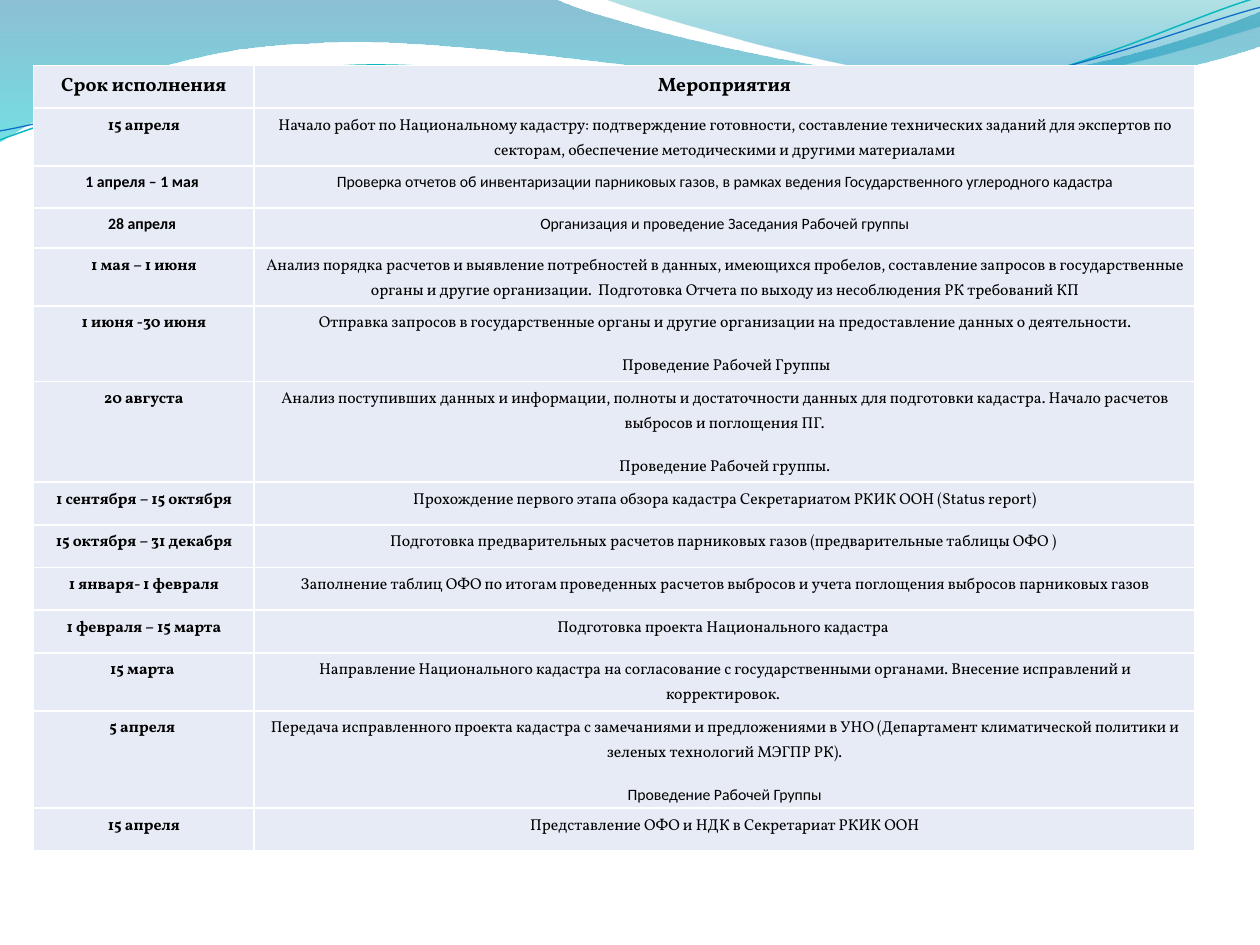
import math

import pptx
import pptx.dml.color
import pptx.enum.text
import pptx.oxml
import pptx.oxml.ns
import pptx.util

Cm = pptx.util.Cm
Pt = pptx.util.Pt
qn = pptx.oxml.ns.qn
SERIF, SANS = "Vollkorn", "Calibri"

# Outlines in cm: a pair is a corner, six numbers are a Bezier curve.
WAVE_BACK = [
    (0, 0), (11.18, -0.03),
    (12.09, 0.43, 16.87, 1.6, 19.25, 1.6), (21.67, 1.6, 24.33, 0.66, 25.4, 0.23),
    (25.43, 0.91),
    (24.97, 1.12, 22.1, 1.93, 18.95, 1.91), (15.8, 1.91, 9.7, 0.71, 6.53, 0.86),
    (3.28, 0.91, 1.17, 2.11, -0.03, 2.87), (0, 0),
]
WAVE_FRONT = [
    (12.17, -0.03),
    (12.93, 0.28, 17.32, 1.57, 19.53, 1.65), (21.74, 1.75, 24.41, 0.81, 25.4, 0.53),
    (25.4, 0), (12.17, -0.03),
]
TEAL_LINE = [
    (0, 2.82),
    (1.22, 2.36, 4.01, 1.45, 7.04, 1.32), (10.03, 1.19, 15.06, 2.26, 18.11, 2.03),
    (21.16, 1.8, 23.83, 0.38, 25.35, -0.05),
]
BLUE_LINE = [
    (0, 2.64),
    (1.19, 2.44, 4.17, 1.55, 7.19, 1.42), (10.24, 1.3, 15.16, 2.13, 18.21, 1.91),
    (21.23, 1.7, 23.9, 0.53, 25.4, 0.15),
]

# Row height in cm, date, activities; a (text, font) pair overrides the serif font.
SCHEDULE = [
    (0.86, "Срок исполнения", ["Мероприятия"]),
    (1.09, "15 апреля", [
        "Начало работ по Национальному кадастру: подтверждение готовности, составление "
        "технических заданий для экспертов по секторам, обеспечение методическими и "
        "другими материалами"]),
    (0.84, ("1 апреля – 1 мая ", SANS), [
        ("Проверка отчетов об инвентаризации парниковых газов, в рамках ведения "
         "Государственного углеродного кадастра", SANS)]),
    (0.81, ("28 апреля ", SANS), [
        ("Организация и проведение Заседания Рабочей группы", SANS)]),
    (1.09, "1 мая – 1 июня", [
        "Анализ порядка расчетов и выявление потребностей в данных, имеющихся пробелов, "
        "составление запросов в государственные органы и другие организации.  "
        "Подготовка Отчета по выходу из несоблюдения РК требований КП"]),
    (1.5, "1 июня -30 июня", [
        "Отправка запросов в государственные органы и другие организации на "
        "предоставление данных о деятельности.",
        " Проведение Рабочей Группы"]),
    (1.96, "20 августа", [
        "Анализ поступивших данных и информации, полноты и достаточности данных для "
        "подготовки кадастра. Начало расчетов выбросов и поглощения ПГ.",
        "Проведение Рабочей группы."]),
    (0.86, "1 сентября – 15 октября", [
        "Прохождение первого этапа обзора кадастра Секретариатом РКИК ООН (Status report)"]),
    (0.86, "15 октября – 31 декабря", [
        "Подготовка предварительных расчетов парниковых газов "
        "(предварительные таблицы ОФО ) "]),
    (0.86, "1 января- 1 февраля", [
        "Заполнение таблиц ОФО по итогам проведенных расчетов выбросов и учета "
        "поглощения выбросов парниковых газов"]),
    (0.86, "1 февраля – 15 марта", ["Подготовка проекта Национального кадастра "]),
    (1.09, "15 марта ", [
        "Направление Национального кадастра на согласование с государственными "
        "органами. Внесение исправлений и корректировок. "]),
    (1.96, "5 апреля ", [
        "Передача исправленного проекта кадастра с замечаниями и предложениями в УНО "
        "(Департамент климатической политики и зеленых технологий МЭГПР РК).",
        ("Проведение Рабочей Группы", SANS)]),
    (0.86, "15 апреля", ["Представление ОФО и НДК в Секретариат РКИК ООН"]),
]


def color(value):
    return pptx.dml.color.RGBColor.from_string(value)


def turn(outline, pivot, degrees):
    """Rotate every point of an outline clockwise around the pivot."""
    cosine, sine = math.cos(math.radians(degrees)), math.sin(math.radians(degrees))
    turned = []
    for segment in outline:
        numbers = []
        for x, y in zip(segment[::2], segment[1::2]):
            x, y = x - pivot[0], y - pivot[1]
            numbers += [pivot[0] + x * cosine - y * sine, pivot[1] + x * sine + y * cosine]
        turned.append(numbers)
    return turned


class SlideBuilder:
    cell_fill = "E7EBF5"
    border = "FFFFFF"
    text_color = "000000"

    def __init__(self, slide):
        self.slide = slide

    def freeform(self, outline, close):
        """Build a polygon through all control points, then bend it into curves."""
        points = [(Cm(x), Cm(y)) for segment in outline
                  for x, y in zip(segment[::2], segment[1::2])]
        builder = self.slide.shapes.build_freeform(*points[0])
        builder.add_line_segments(points[1:], close=close)
        shape = builder.convert_to_shape()
        shape.shadow.inherit = False
        lines = iter(list(shape.element.spPr.iter(qn("a:lnTo"))))
        for segment in outline[1:]:
            first = next(lines)
            if len(segment) == 6:
                first.tag = qn("a:cubicBezTo")
                for line in (next(lines), next(lines)):
                    first.append(line[0])
                    line.getparent().remove(line)
        return shape

    def wave(self, outline, stops):
        """Add a filled wave; stops are (position, colour, opacity in percent)."""
        shape = self.freeform(outline, True)
        shape.line.fill.background()
        shape.fill.gradient()
        shape.fill.gradient_angle = 270
        for stop, (position, value, _) in zip(shape.fill.gradient_stops, stops):
            stop.position = position
            stop.color.rgb = color(value)
        for element, stop in zip(shape.element.spPr.iter(qn("a:srgbClr")), stops):
            element.append(element.makeelement(qn("a:alpha"), {"val": str(stop[2] * 1000)}))

    def curve(self, outline, pivot, value, width, rotation=357.3):
        """Add a line whose frame is rotated, so that it shows along the outline."""
        shape = self.freeform(turn(outline, pivot, -rotation), False)
        shape.rotation = rotation
        shape.fill.background()
        shape.line.color.rgb = color(value)
        shape.line.width = Pt(width)

    def table(self, left, top, widths, rows):
        heights = [row[0] for row in rows]
        table = self.slide.shapes.add_table(
            len(rows), len(widths), Cm(left), Cm(top), Cm(sum(widths)), Cm(sum(heights))).table
        table.horz_banding = False
        for column, width in zip(table.columns, widths):
            column.width = Cm(width)
        for index, (height, date, activities) in enumerate(rows):
            table.rows[index].height = Cm(height)
            size = 9 if index else 11
            self.cell(table.cell(index, 0), [date], size, True)
            self.cell(table.cell(index, 1), activities, size, index == 0)

    def cell(self, cell, lines, size, bold):
        cell.margin_left = cell.margin_right = Cm(0.15)
        cell.margin_top = cell.margin_bottom = Pt(2.2)
        properties = cell._tc.get_or_add_tcPr()
        for side in "LRTB":
            properties.append(pptx.oxml.parse_xml(
                f'<a:ln{side} {pptx.oxml.ns.nsdecls("a")} w="{Pt(1)}"><a:solidFill>'
                f'<a:srgbClr val="{self.border}"/></a:solidFill></a:ln{side}>'))
        cell.fill.solid()
        cell.fill.fore_color.rgb = color(self.cell_fill)
        pairs = [(line, SERIF) if isinstance(line, str) else line for line in lines]
        cell.text_frame.text = "\n".join(text for text, _ in pairs)
        for paragraph, (_, name) in zip(cell.text_frame.paragraphs, pairs):
            paragraph.alignment = pptx.enum.text.PP_ALIGN.CENTER
            paragraph.line_spacing = 1.15
            paragraph.space_after = Pt(10)
            font = paragraph.runs[0].font
            font.name, font.size, font.bold = name, Pt(size), bold
            font.color.rgb = color(self.text_color)


def main():
    presentation = pptx.Presentation()
    presentation.slide_width, presentation.slide_height = Cm(25.4), Cm(19.05)
    builder = SlideBuilder(presentation.slides.add_slide(presentation.slide_layouts[6]))
    builder.wave(WAVE_BACK, [(0, "0074A1", 45), (1, "00C6CF", 55)])
    builder.wave(WAVE_FRONT, [(0, "00A1A9", 30), (0.8, "008BBF", 45)])
    builder.curve(TEAL_LINE, (12.67, 1.46), "0AB8BF", 0.85)
    builder.curve(BLUE_LINE, (12.69, 1.5), "0F6FC6", 0.75)
    builder.table(0.68, 1.32, [4.44, 18.97], SCHEDULE)
    presentation.save("out.pptx")


if __name__ == "__main__":
    main()
